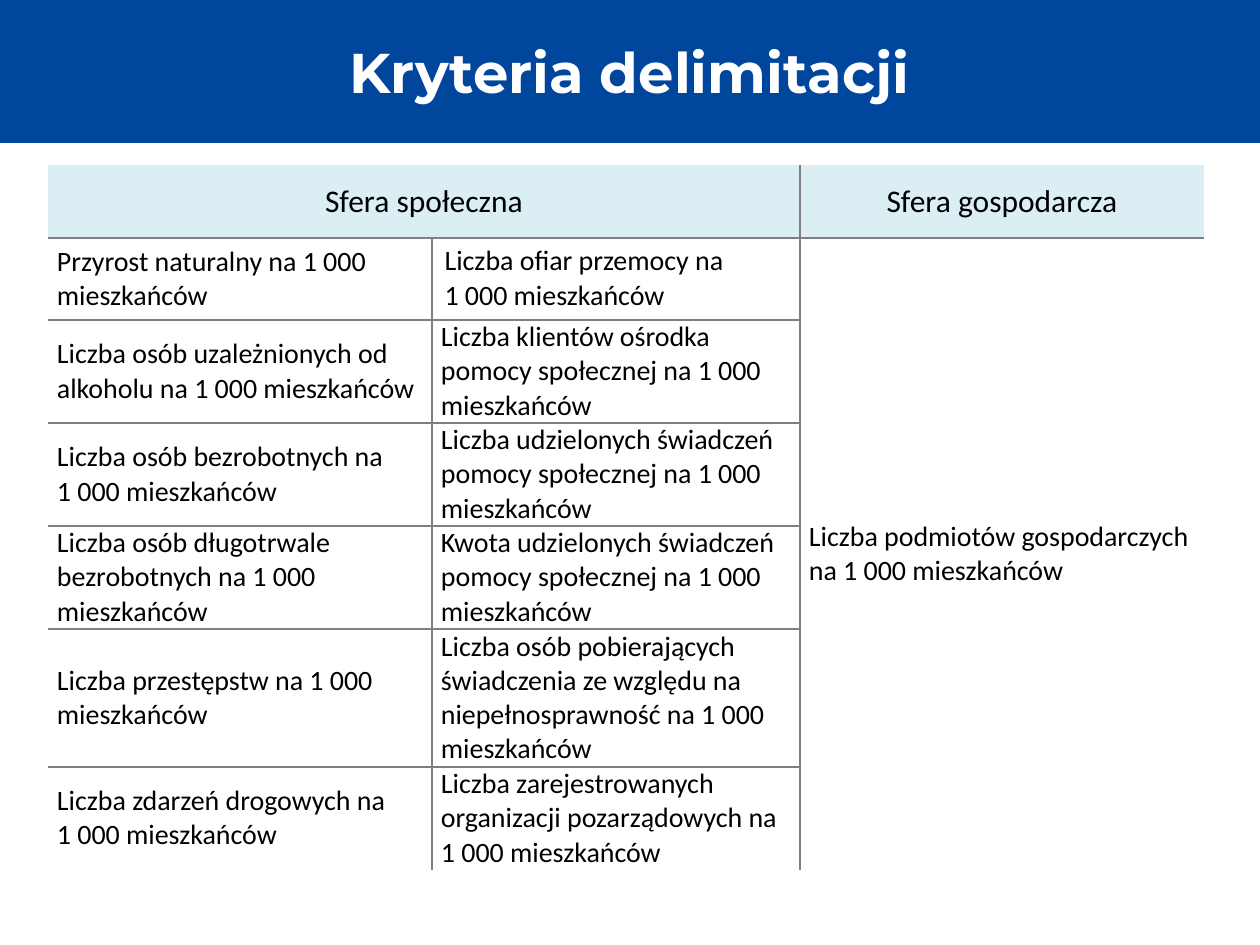
from lxml import etree
from pptx import Presentation
from pptx.dml.color import RGBColor
from pptx.enum.text import MSO_ANCHOR, PP_ALIGN
from pptx.oxml.ns import qn
from pptx.util import Emu, Pt

PX = 914400 // 126
MIDDLE, TOP = MSO_ANCHOR.MIDDLE, MSO_ANCHOR.TOP
CENTER, LEFT = PP_ALIGN.CENTER, PP_ALIGN.LEFT

BLUE = RGBColor(0x00, 0x46, 0x9C)
PALE_BLUE = RGBColor(0xDB, 0xEE, 0xF4)
GREY = RGBColor(0x80, 0x80, 0x80)
WHITE = RGBColor(0xFF, 0xFF, 0xFF)
BLACK = RGBColor(0x00, 0x00, 0x00)

COLUMN_WIDTHS = [384, 368, 404]
ROW_HEIGHTS = [73, 82, 103, 103, 103, 138, 103]
CRITERIA = [
    ["Sfera społeczna", "", "Sfera gospodarcza"],
    ["Przyrost naturalny na 1 000 mieszkańców",
     "Liczba ofiar przemocy na\n1 000 mieszkańców",
     "Liczba podmiotów gospodarczych na 1 000 mieszkańców"],
    ["Liczba osób uzależnionych od alkoholu na 1 000 mieszkańców",
     "Liczba klientów ośrodka pomocy społecznej na 1 000 mieszkańców", ""],
    ["Liczba osób bezrobotnych na\v1 000 mieszkańców",
     "Liczba udzielonych świadczeń pomocy społecznej na 1 000 mieszkańców", ""],
    ["Liczba osób długotrwale bezrobotnych na 1 000 mieszkańców",
     "Kwota udzielonych świadczeń pomocy społecznej na 1 000 mieszkańców", ""],
    ["Liczba przestępstw na 1 000 mieszkańców",
     "Liczba osób pobierających świadczenia ze względu na "
     "niepełnosprawność na 1 000 mieszkańców", ""],
    ["Liczba zdarzeń drogowych na\v1 000 mieszkańców",
     "Liczba zarejestrowanych organizacji pozarządowych na\v1 000 mieszkańców", ""],
]


def format_text(text_frame, font_name, size, color, alignment, bold=False):
    for paragraph in text_frame.paragraphs:
        paragraph.alignment = alignment
        for run in paragraph.runs:
            run.font.name = font_name
            run.font.size = Pt(size)
            run.font.bold = bold
            run.font.color.rgb = color


def set_borders(cell, visible_sides):
    """Draw a grey line on the visible sides (L, R, T, B) and none on the others."""
    properties = cell._tc.get_or_add_tcPr()
    for side in "LRTB":
        line = etree.SubElement(properties, qn(f"a:ln{side}"), w=str(Pt(1)))
        if side in visible_sides:
            fill = etree.SubElement(line, qn("a:solidFill"))
            etree.SubElement(fill, qn("a:srgbClr"), val=str(GREY))
        else:
            etree.SubElement(line, qn("a:noFill"))


presentation = Presentation()
presentation.slide_width = Emu(1260 * PX)
presentation.slide_height = Emu(945 * PX)
slide = presentation.slides.add_slide(presentation.slide_layouts[5])

title = slide.shapes.title
title.left, title.top = Emu(0), Emu(0)
title.width, title.height = Emu(1260 * PX), Emu(143 * PX)
title.fill.solid()
title.fill.fore_color.rgb = BLUE
title.text_frame.text = "Kryteria delimitacji"
title.text_frame.vertical_anchor = MIDDLE
format_text(title.text_frame, "Montserrat", 32, WHITE, CENTER, bold=True)

table = slide.shapes.add_table(
    len(ROW_HEIGHTS), len(COLUMN_WIDTHS), Emu(48 * PX), Emu(165 * PX),
    Emu(sum(COLUMN_WIDTHS) * PX), Emu(sum(ROW_HEIGHTS) * PX)).table
table.first_row = False
table.horz_banding = False
for column, width in zip(table.columns, COLUMN_WIDTHS):
    column.width = Emu(width * PX)
for row, height in zip(table.rows, ROW_HEIGHTS):
    row.height = Emu(height * PX)

last_row = len(ROW_HEIGHTS) - 1
for row_index, texts in enumerate(CRITERIA):
    is_header = row_index == 0
    for column_index, text in enumerate(texts):
        cell = table.cell(row_index, column_index)
        in_economy = column_index == 2

        # Lines run between cells only, never on the outside or inside a merged cell.
        sides = ""
        if in_economy or (column_index == 1 and not is_header):
            sides += "L"
        if column_index == 1 or (column_index == 0 and not is_header):
            sides += "R"
        if row_index == 1 or (row_index > 1 and not in_economy):
            sides += "T"
        if is_header or (row_index < last_row and not in_economy):
            sides += "B"
        set_borders(cell, sides)

        cell.fill.solid()
        cell.fill.fore_color.rgb = PALE_BLUE if is_header else WHITE
        is_victims = (row_index, column_index) == (1, 1)
        cell.vertical_anchor = TOP if is_victims else MIDDLE
        if not is_header and not is_victims:
            cell.margin_left = cell.margin_right = Emu(9 * PX)
            cell.margin_top = cell.margin_bottom = Emu(0)
        if text:
            cell.text_frame.text = text
            format_text(cell.text_frame, "Calibri", 18 if is_header else 16,
                        BLACK, CENTER if is_header else LEFT)

table.cell(0, 0).merge(table.cell(0, 1))
table.cell(1, 2).merge(table.cell(last_row, 2))

presentation.save("out.pptx")
